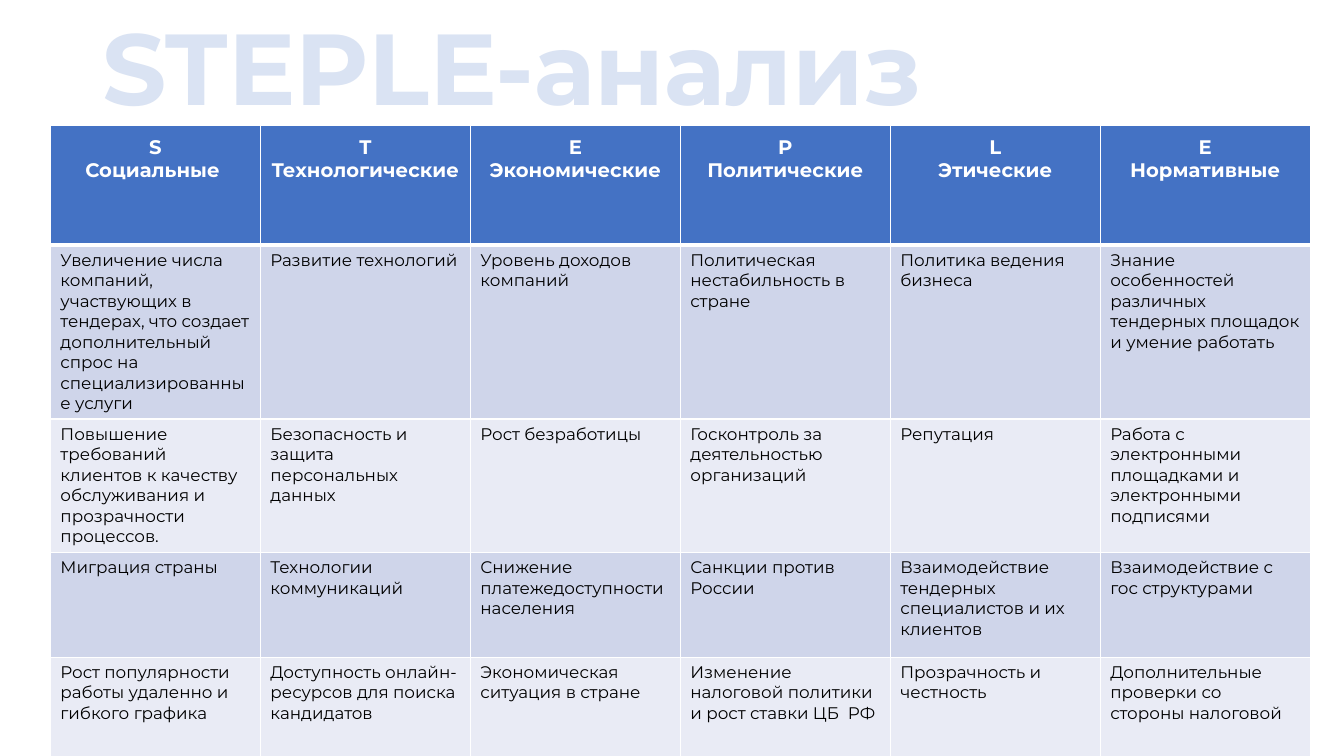
from dataclasses import dataclass

from lxml import etree
from pptx import Presentation
from pptx import util as u
from pptx.dml.color import RGBColor
from pptx.enum import text
from pptx.oxml import ns

PX = 9525  # EMU in one px


@dataclass(frozen=True)
class Theme:
    font: str = "Montserrat"
    title_color: str = "DAE3F3"
    header_fill: str = "4472C4"
    header_color: str = "FFFFFF"
    body_color: str = "000000"
    bands: tuple = ("CFD5EA", "E9EBF5")
    border_color: str = "FFFFFF"
    title_size: int = 72
    header_size: int = 14
    body_size: int = 12
    thin: int = 1
    thick: int = 3


FACTORS = [
    ("S", "Социальные "),
    ("T", "Технологические"),
    ("E", "Экономические"),
    ("P", "Политические"),
    ("L", "Этические"),
    ("E", "Нормативные"),
]

INFLUENCES = [
    [
        "Увеличение числа компаний, участвующих в тендерах, что создает "
        "дополнительный спрос на специализированные услуги",
        "Развитие технологий",
        "Уровень доходов компаний",
        "Политическая нестабильность в стране",
        "Политика ведения бизнеса",
        "Знание особенностей различных тендерных площадок и умение работать",
    ],
    [
        "Повышение требований клиентов к качеству обслуживания и прозрачности процессов.",
        "Безопасность и защита персональных данных",
        "Рост безработицы",
        "Госконтроль за деятельностью организаций",
        "Репутация",
        "Работа с электронными площадками и электронными подписями",
    ],
    [
        "Миграция страны",
        "Технологии коммуникаций",
        "Снижение платежедоступности населения",
        "Санкции против России",
        "Взаимодействие тендерных специалистов и их клиентов",
        "Взаимодействие с гос структурами",
    ],
    [
        "Рост популярности работы удаленно и гибкого графика",
        "Доступность онлайн-ресурсов для поиска кандидатов",
        "Экономическая ситуация в стране",
        "Изменение налоговой политики и рост ставки ЦБ  РФ",
        "Прозрачность и честность",
        "Дополнительные проверки со стороны налоговой",
    ],
]


class SlideBuilder:
    def __init__(self, slide, theme):
        self.slide = slide
        self.theme = theme

    def format_text(self, frame, size, color, bold, align):
        for paragraph in frame.paragraphs:
            paragraph.alignment = align
            for run in paragraph.runs:
                run.font.name = self.theme.font
                run.font.size = u.Pt(size)
                run.font.bold = bold
                run.font.color.rgb = RGBColor.from_string(color)

    def title(self, wording, left, top, width, height):
        heading = self.slide.shapes.title
        heading.left, heading.top = left * PX, top * PX
        heading.width, heading.height = width * PX, height * PX
        frame = heading.text_frame
        frame.text = wording
        frame.word_wrap = True
        frame.auto_size = text.MSO_AUTO_SIZE.NONE
        frame.vertical_anchor = text.MSO_ANCHOR.MIDDLE
        frame.paragraphs[0].line_spacing = 0.9
        self.format_text(frame, self.theme.title_size, self.theme.title_color,
                         True, text.PP_ALIGN.LEFT)

    def borders(self, cell, top, bottom):
        """Draw all four cell borders; top and bottom are widths in points."""
        properties = cell._tc.get_or_add_tcPr()
        thin = self.theme.thin
        for side, width in (("L", thin), ("R", thin), ("T", top), ("B", bottom)):
            line = etree.SubElement(properties, ns.qn(f"a:ln{side}"), w=str(u.Pt(width)))
            fill = etree.SubElement(line, ns.qn("a:solidFill"))
            etree.SubElement(fill, ns.qn("a:srgbClr"), val=self.theme.border_color)

    def cell_fill(self, cell, color):
        cell.fill.solid()
        cell.fill.fore_color.rgb = RGBColor.from_string(color)

    def header_cell(self, cell, letter, factor):
        theme = self.theme
        cell.text_frame.text = f"{letter}\n{factor}"
        cell.margin_top = cell.margin_bottom = u.Inches(0.1)
        self.format_text(cell.text_frame, theme.header_size, theme.header_color,
                         True, text.PP_ALIGN.CENTER)
        self.borders(cell, theme.thin, theme.thick)
        self.cell_fill(cell, theme.header_fill)

    def body_cell(self, cell, wording, row):
        theme = self.theme
        cell.text_frame.text = wording
        self.format_text(cell.text_frame, theme.body_size, theme.body_color,
                         False, text.PP_ALIGN.LEFT)
        self.borders(cell, theme.thin if row else theme.thick, theme.thin)
        self.cell_fill(cell, theme.bands[row % 2])

    def table(self, headers, rows, left, top, column_width, header_height, row_height):
        height = header_height + row_height * len(rows)
        grid = self.slide.shapes.add_table(
            len(rows) + 1, len(headers), left * PX, top * PX,
            column_width * len(headers) * PX, height * PX).table
        for index, grid_row in enumerate(grid.rows):
            grid_row.height = (row_height if index else header_height) * PX
        for column, (letter, factor) in enumerate(headers):
            self.header_cell(grid.cell(0, column), letter, factor)
        for row, wordings in enumerate(rows):
            for column, wording in enumerate(wordings):
                self.body_cell(grid.cell(row + 1, column), wording, row)


def main():
    deck = Presentation()
    deck.slide_width, deck.slide_height = 1280 * PX, 720 * PX
    title_only = deck.slide_layouts[5]
    builder = SlideBuilder(deck.slides.add_slide(title_only), Theme())
    builder.title("STEPLЕ-анализ", 88, 0, 1104, 139)
    builder.table(FACTORS, INFLUENCES, left=48, top=119, column_width=200,
                  header_height=114, row_height=100)
    deck.save("out.pptx")


if __name__ == "__main__":
    main()
